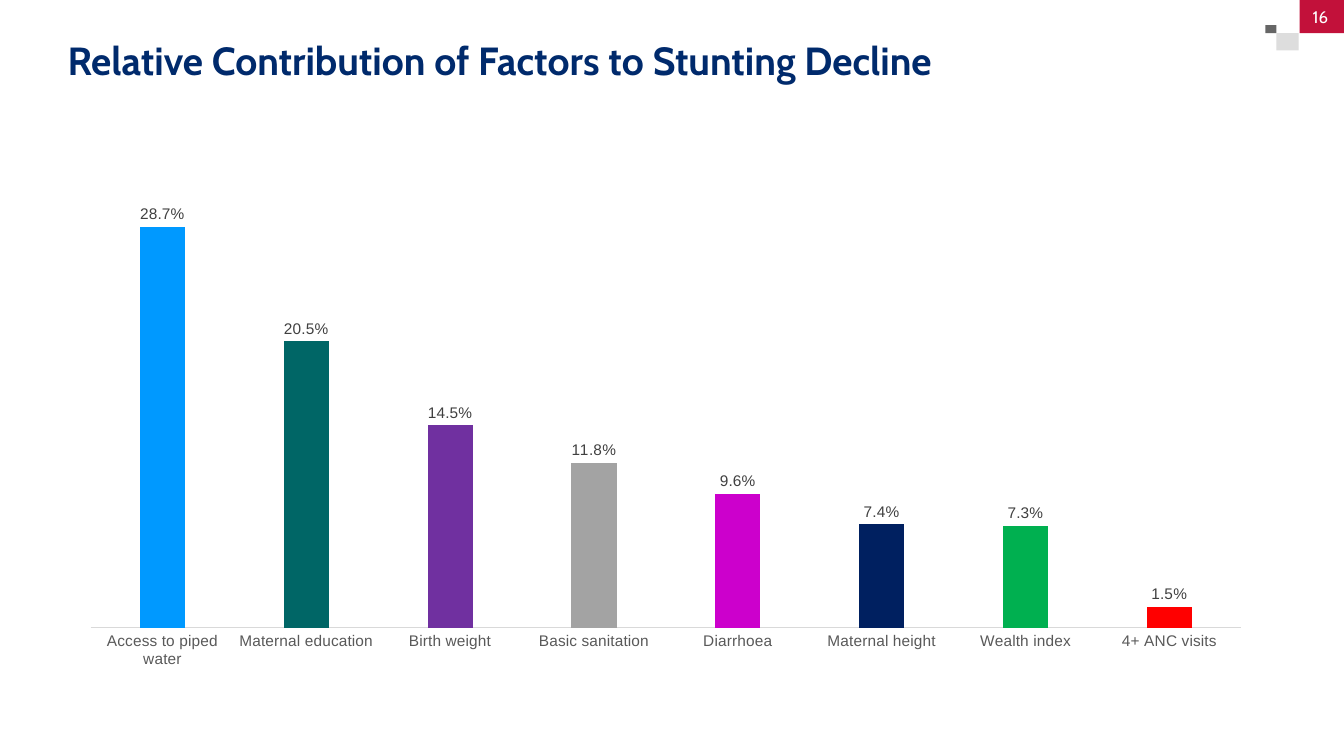
from dataclasses import dataclass
from lxml import etree
from pptx import Presentation
from pptx.chart import data as cd
from pptx.dml.color import RGBColor
from pptx.enum import chart as ch, shapes, text
from pptx.oxml import ns
from pptx.util import Inches, Pt


@dataclass(frozen=True)
class Theme:
    """Colours, fonts and type sizes of the slide."""
    head: str = "Cabin"
    body: str = "Arial"
    navy: str = "002A6C"
    white: str = "FFFFFF"
    red: str = "C2113A"
    grey: str = "666666"
    pale: str = "DDDDDD"
    axis: str = "D9D9D9"
    name: str = "595959"
    value: str = "404040"
    big: int = 28
    small: int = 12
    label: int = 11


THEME = Theme()
FACTORS = [
    ("Access to piped water", 0.287, "0099FF"),
    ("Maternal education", 0.205, "006666"),
    ("Birth weight", 0.145, "7030A0"),
    ("Basic sanitation", 0.118, "A3A3A3"),
    ("Diarrhoea", 0.096, "CC00CC"),
    ("Maternal height", 0.074, "002060"),
    ("Wealth index", 0.073, "00B050"),
    ("4+ ANC visits", 0.015, "FF0000"),
]


def apply(item, **vals):
    """Set each given attribute on the item."""
    for key, val in vals.items():
        setattr(item, key, val)


def style(font, face, size, color, bold=False):
    """Give a font its face, size, colour and weight."""
    apply(font, name=face, size=Pt(size), bold=bold)
    font.color.rgb = RGBColor.from_string(color)


def paint(fill, color):
    """Make a fill solid in one colour."""
    fill.solid()
    fill.fore_color.rgb = RGBColor.from_string(color)


def write(slide, box, words, size, color, align, bold=False):
    """Write one line of text, centred in height within the box."""
    frame = slide.shapes.add_textbox(*map(Inches, box)).text_frame
    apply(frame, margin_left=0, margin_right=0, margin_top=0,
          margin_bottom=0, word_wrap=True,
          vertical_anchor=text.MSO_ANCHOR.MIDDLE)
    para = frame.paragraphs[0]
    para.alignment = align
    run = para.add_run()
    run.text = words
    style(run.font, THEME.head, size, color, bold)


def corner(slide, box, number):
    """Draw the stepped squares and the page number."""
    left, top, wide, high = box
    tiles = [
        (0, 0.25, 0.11, 0.08, THEME.grey),
        (0.11, 0.33, 0.22, 0.17, THEME.pale),
        (wide - 0.44, 0, 0.44, 0.33, THEME.red),
    ]
    for x, y, w, h, color in tiles:
        tile = slide.shapes.add_shape(
            shapes.MSO_SHAPE.RECTANGLE,
            *map(Inches, (left + x, top + y, w, h)))
        tile.shadow.inherit = False
        tile.line.fill.background()
        paint(tile.fill, color)
    write(slide, (left + wide - 0.44, top, 0.41, 0.33), number,
          THEME.small, THEME.white, text.PP_ALIGN.CENTER)


def place(plot, **parts):
    """Fix the inner plot area as shares of the chart."""
    area = plot._element.getparent()
    for old in area.findall(ns.qn("c:layout")):
        area.remove(old)
    layout = etree.Element(ns.qn("c:layout"))
    manual = etree.SubElement(layout, ns.qn("c:manualLayout"))
    vals = {"layoutTarget": "inner", "xMode": "edge", "yMode": "edge"}
    for key, val in {**vals, **parts}.items():
        etree.SubElement(manual, ns.qn("c:" + key)).set("val", str(val))
    area.insert(0, layout)


def columns(slide, box):
    """Chart the factors as columns, each in its own colour."""
    names, shares, colors = zip(*FACTORS)
    data = cd.CategoryChartData(number_format="0.0%")
    data.categories = names
    data.add_series("Series 1", shares)
    chart = slide.shapes.add_chart(
        ch.XL_CHART_TYPE.COLUMN_CLUSTERED, *map(Inches, box), data).chart
    apply(chart, has_legend=False, has_title=False)
    style(chart.font, THEME.body, THEME.label, THEME.name)

    axis = chart.category_axis
    apply(axis, major_tick_mark=ch.XL_TICK_MARK.NONE,
          minor_tick_mark=ch.XL_TICK_MARK.NONE)
    style(axis.tick_labels.font, THEME.body, THEME.label, THEME.name)
    paint(axis.format.line.fill, THEME.axis)
    axis.format.line.width = Pt(0.75)
    apply(chart.value_axis, visible=False, has_major_gridlines=False,
          minimum_scale=0, maximum_scale=0.35)

    plot = chart.plots[0]
    apply(plot, gap_width=219, overlap=-27, vary_by_categories=False,
          has_data_labels=True)
    apply(plot.data_labels, show_value=True, number_format="0.0%",
          number_format_is_linked=False,
          position=ch.XL_LABEL_POSITION.OUTSIDE_END)
    style(plot.data_labels.font, THEME.body, THEME.label, THEME.value)
    series = plot.series[0]
    paint(series.format.fill, colors[0])
    for i, color in enumerate(colors[1:], 1):
        paint(series.points[i].format.fill, color)
    place(plot, x=0.02, y=0.02, w=0.96, h=0.89)


def main():
    """Build the slide and save it."""
    deck = Presentation()
    apply(deck, slide_width=Inches(13.33), slide_height=Inches(7.5))
    slide = deck.slides.add_slide(deck.slide_layouts[6])
    paint(slide.background.fill, THEME.white)
    write(slide, (0.67, 0.2, 12.04, 0.78),
          "Relative Contribution of Factors to Stunting Decline",
          THEME.big, THEME.navy, text.PP_ALIGN.LEFT, True)
    corner(slide, (12.55, 0, 0.78, 0.5), "16")
    columns(slide, (0.66, 1.27, 11.89, 5.45))
    deck.save("out.pptx")


if __name__ == "__main__":
    main()
